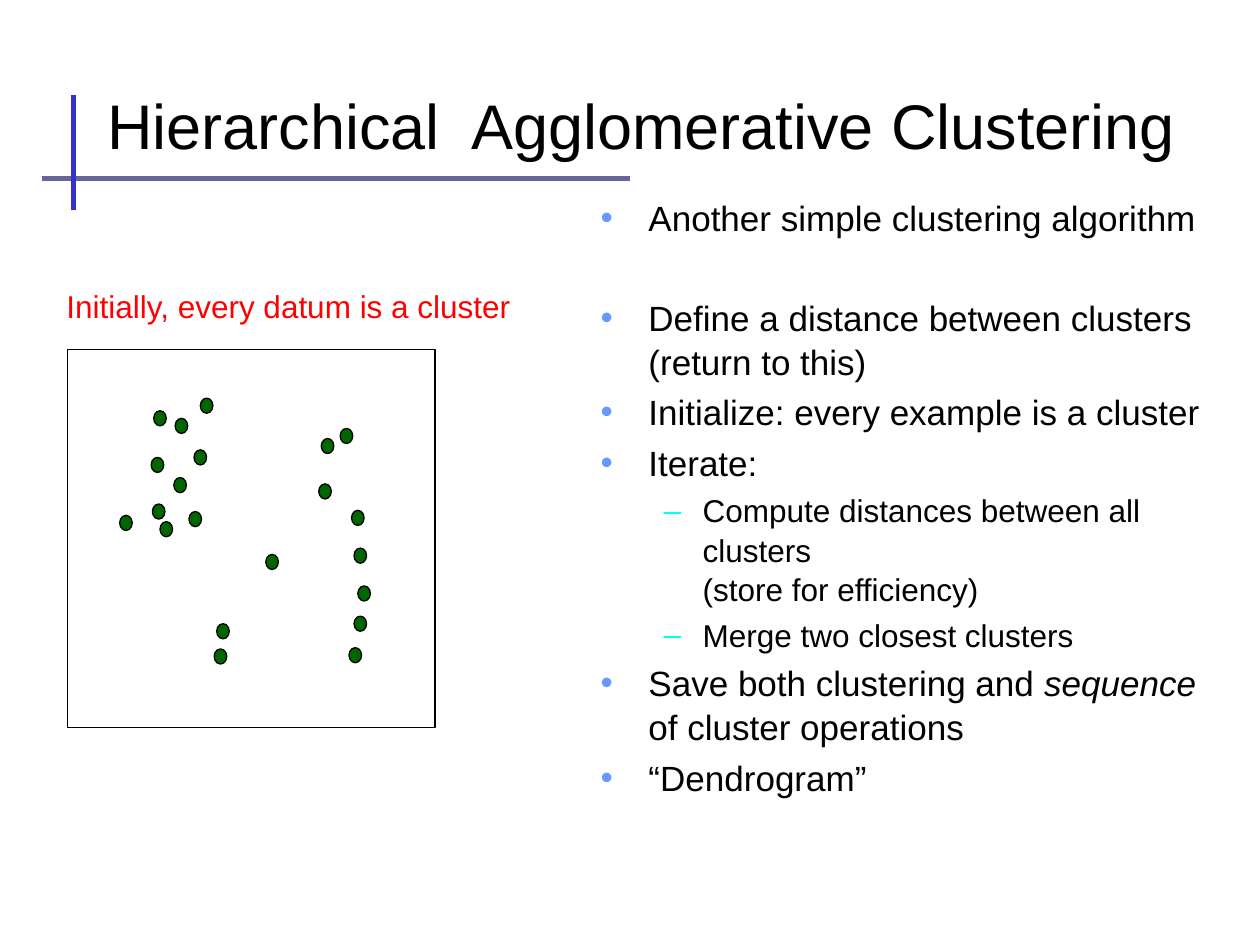
import pptx
import pptx.util
import pptx.dml.color
import pptx.enum.shapes
import pptx.enum.text
import lxml.etree
from pptx.oxml.ns import qn

RGBColor = pptx.dml.color.RGBColor
BLACK = RGBColor(0x00, 0x00, 0x00)
RED = RGBColor(0xFF, 0x00, 0x00)
GREEN = RGBColor(0x00, 0x66, 0x00)
SLATE = RGBColor(0x66, 0x66, 0x99)
INDIGO = RGBColor(0x33, 0x33, 0xCC)
SKY = RGBColor(0x66, 0x99, 0xFF)
CYAN = RGBColor(0x00, 0xFF, 0xFF)

Inches, Pt = pptx.util.Inches, pptx.util.Pt
SHAPE = pptx.enum.shapes.MSO_SHAPE

deck = pptx.Presentation()
deck.slide_width, deck.slide_height = Inches(10), Inches(7.5)
CELL = deck.slide_width / 120  # grid of 120 columns by 90 rows


def grid(*cells):
    return [round(cell * CELL) for cell in cells]


def style(paragraph, size, color):
    paragraph.font.size = Pt(size)
    for run in paragraph.runs:
        run.font.name = "Arial"
        run.font.size = Pt(size)
        run.font.color.rgb = color


slide = deck.slides.add_slide(deck.slide_layouts[1])

# Crossed rules beside the title
for ends, color in [((4, 17, 60, 17), SLATE), ((7, 20, 7, 9), INDIGO)]:
    rule = slide.shapes.add_connector(
        pptx.enum.shapes.MSO_CONNECTOR.STRAIGHT, *grid(*ends))
    rule.line.color.rgb = color
    rule.line.width = Pt(3)
    lxml.etree.SubElement(rule._element.spPr, qn("a:effectLst"))

# Title
title = slide.shapes.title
title.left, title.top, title.width, title.height = grid(9, 3, 110, 13)
title.text_frame.text = "Hierarchical  Agglomerative Clustering"
title.text_frame.auto_size = pptx.enum.text.MSO_AUTO_SIZE.NONE
title.text_frame.vertical_anchor = pptx.enum.text.MSO_ANCHOR.BOTTOM
title.text_frame.paragraphs[0].alignment = pptx.enum.text.PP_ALIGN.LEFT
style(title.text_frame.paragraphs[0], 36, BLACK)

# Algorithm steps: level, space before in points, text pieces (second is italic)
steps = [
    (0, 0, ["Another simple clustering algorithm"]),
    (0, 32, ["Define a distance between clusters (return to this)"]),
    (0, 4, ["Initialize: every example is a cluster"]),
    (0, 4, ["Iterate:"]),
    (1, 3.6, ["Compute distances between all clusters \v(store for efficiency)"]),
    (1, 3.6, ["Merge two closest clusters"]),
    (0, 4, ["Save both clustering and ", "sequence", " of cluster operations"]),
    (0, 4, ["“Dendrogram”"]),
]
# Per level: size, bullet, bullet colour, left margin, hanging indent
levels = [(20, "•", SKY, 0.38, -0.38), (18, "–", CYAN, 0.81, -0.31)]

algorithm = slide.placeholders[1]
algorithm.left, algorithm.top, algorithm.width, algorithm.height = grid(56, 18, 62, 63)
algorithm.text_frame.text = "\n".join("".join(pieces) for _, _, pieces in steps)
algorithm.text_frame.auto_size = pptx.enum.text.MSO_AUTO_SIZE.NONE
for paragraph, (level, gap, pieces) in zip(algorithm.text_frame.paragraphs, steps):
    size, bullet, bullet_color, margin, indent = levels[level]
    if len(pieces) > 1:
        paragraph.text = pieces[0]
        for piece in pieces[1:]:
            paragraph.add_run().text = piece
        paragraph.runs[1].font.italic = True
    paragraph.level = level
    props = paragraph._p.get_or_add_pPr()
    props.set("marL", str(Inches(margin)))
    props.set("indent", str(Inches(indent)))
    tint = lxml.etree.SubElement(props, qn("a:buClr"))
    lxml.etree.SubElement(tint, qn("a:srgbClr")).set("val", str(bullet_color))
    lxml.etree.SubElement(props, qn("a:buChar")).set("char", bullet)
    paragraph.space_before = Pt(gap)
    paragraph.line_spacing = 1.04
    style(paragraph, size, BLACK)

# Data points: left and top in inches
data = [
    (1.22, 3.26), (0.95, 4.09), (1.59, 3.16), (1.2, 3.63), (1.54, 3.57),
    (1.5, 4.06), (2.55, 3.48), (2.53, 3.84), (2.79, 4.05), (2.81, 4.35),
    (2.84, 4.65), (2.81, 4.89), (1.39, 3.32), (1.21, 4), (1.38, 3.79),
    (1.27, 4.14), (2.77, 5.14), (2.7, 3.4), (1.72, 4.95), (1.7, 5.15),
    (2.11, 4.4),
]
for left, top in data:
    datum = slide.shapes.add_shape(
        SHAPE.OVAL, Inches(left), Inches(top), Inches(0.1), Inches(0.12))
    datum.shadow.inherit = False
    datum.fill.solid()
    datum.fill.fore_color.rgb = GREEN
    datum.line.color.rgb = BLACK
    datum.line.width = Pt(0.75)

# Frame around the data
frame = slide.shapes.add_shape(SHAPE.RECTANGLE, *grid(6.43, 33.3, 35, 36))
frame.shadow.inherit = False
frame.fill.background()
frame.line.color.rgb = BLACK
frame.line.width = Pt(0.75)

# Caption above the frame
caption = slide.shapes.add_textbox(*grid(5.15, 26.75, 44.9, 4.8))
caption.text_frame.word_wrap = False
caption.text_frame.text = "Initially, every datum is a cluster"
style(caption.text_frame.paragraphs[0], 18, RED)

deck.save("out.pptx")
